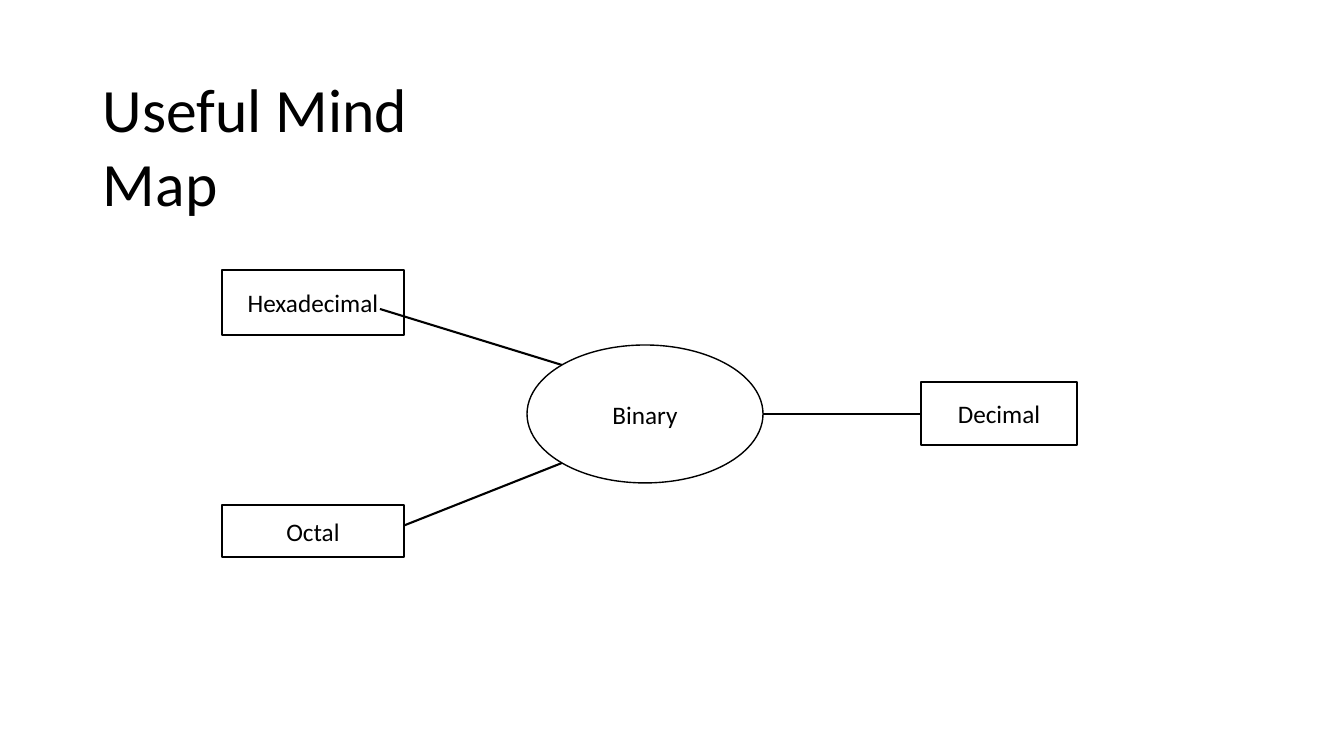
from pptx import Presentation
from pptx.dml.color import RGBColor
from pptx.enum.shapes import MSO_CONNECTOR, MSO_SHAPE
from pptx.enum.text import MSO_ANCHOR, MSO_AUTO_SIZE, PP_ALIGN
from pptx.oxml.ns import qn
from pptx.util import Emu, Pt
from lxml import etree

OVAL, RECT = MSO_SHAPE.OVAL, MSO_SHAPE.RECTANGLE
STRAIGHT = MSO_CONNECTOR.STRAIGHT
LEFT, CENTER = PP_ALIGN.LEFT, PP_ALIGN.CENTER
TOP, MIDDLE = MSO_ANCHOR.TOP, MSO_ANCHOR.MIDDLE

# Content: px, 100.8 to the inch
SLIDE_SIZE = (1344, 756)
INK, PAPER, FONT = "000000", "FFFFFF", "Calibri"
TITLE = ("Useful Mind Map", (103, 71, 412, 150))
SPOKES = [  # from the hub outwards
    ((562, 365), (380, 309)),
    ((763, 414), (921, 414)),
    ((562, 463), (380, 535)),
]
NODES = [  # text, outline, left/top/width/height, fill
    ("Binary", OVAL, (527, 345, 236, 138), None),
    ("Hexadecimal", RECT, (222, 270, 182, 65), None),
    ("Octal", RECT, (222, 505, 182, 52), PAPER),
    ("Decimal", RECT, (921, 382, 156, 63), None),
]


def px(value):
    return Emu(round(value * 914400 / 100.8))


def color(code):
    return RGBColor.from_string(code)


def write(frame, text, size, align, anchor):
    frame.text = text
    frame.word_wrap = True
    frame.auto_size = MSO_AUTO_SIZE.NONE
    frame.vertical_anchor = anchor
    frame.margin_left = frame.margin_right = 0
    frame.margin_top = frame.margin_bottom = 0
    paragraph = frame.paragraphs[0]
    paragraph.alignment = align
    font = paragraph.runs[0].font
    font.name, font.size = FONT, Pt(size)
    font.color.rgb = color(INK)


def draw_line(line, width):
    line.color.rgb = color(INK)
    line.width = Pt(width)


prs = Presentation()
prs.slide_width, prs.slide_height = map(px, SLIDE_SIZE)
slide = prs.slides.add_slide(prs.slide_layouts[5])

# Title
heading, heading_box = TITLE
title = slide.shapes.title
title.left, title.top, title.width, title.height = map(px, heading_box)
write(title.text_frame, heading, 44, LEFT, TOP)

# Spokes, behind the nodes
for start, end in SPOKES:
    spoke = slide.shapes.add_connector(STRAIGHT, *map(px, start + end))
    draw_line(spoke.line, 1.5)
    etree.SubElement(spoke._element.spPr, qn("a:effectLst"))

# Nodes
for label, outline, box, fill in NODES:
    node = slide.shapes.add_shape(outline, *map(px, box))
    node.shadow.inherit = False
    if fill:
        node.fill.solid()
        node.fill.fore_color.rgb = color(fill)
    else:
        node.fill.background()
    draw_line(node.line, 1)
    write(node.text_frame, label, 18, CENTER, MIDDLE)

prs.save("out.pptx")
